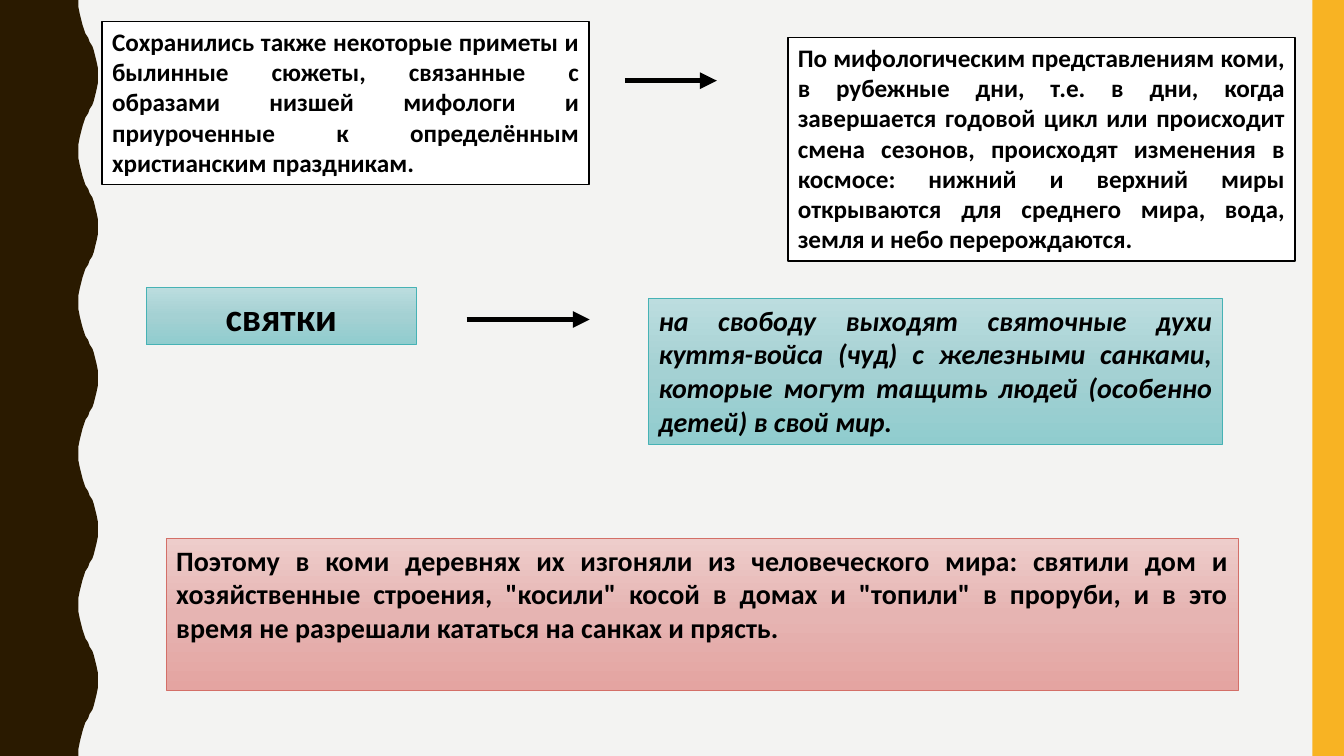
from copy import deepcopy
from dataclasses import dataclass

from lxml import etree
from pptx import Presentation
from pptx.dml.color import RGBColor
from pptx.enum import shapes, text
from pptx.oxml import ns
from pptx.util import Pt


@dataclass(frozen=True)
class Theme:
    background: str = "F3F3F2"
    wave: str = "2A1A00"
    stripe: str = "F8B323"
    ink: str = "000000"
    paper: tuple = ("FFFFFF",)
    teal: tuple = ("BCDDDF", "A4D1D3", "90CCCE")
    teal_edge: str = "46B2B5"
    rose: tuple = ("EECDCB", "E6B4B2", "E4A4A1")
    rose_edge: str = "D36F68"
    font: str = "Calibri"
    body: int = 18
    accent: int = 20
    heading: int = 28


THEME = Theme()
WIDTH, HEIGHT = 960, 540
WAVE_PERIOD = 108
# One rising half-wave, as (x, y) in points; the falling half mirrors it.
HALF_WAVE = [(56.2, 0), (56.4, 5), (57, 10), (57.8, 14.4), (58.7, 18),
             (60, 21), (61.3, 24), (62.7, 27), (64.1, 30), (65.5, 33),
             (66.9, 36), (68.2, 39.6), (69.2, 44), (69.8, 49), (70, 54)]


def rgb(color):
    return RGBColor.from_string(color)


def paint(shape, colors):
    """Fill with one colour, or with an even top-to-bottom gradient."""
    fill = shape.fill
    if len(colors) == 1:
        fill.solid()
        fill.fore_color.rgb = rgb(colors[0])
        return
    fill.gradient()
    fill.gradient_angle = 270
    stop_list = shape._element.spPr.find(".//" + ns.qn("a:gsLst"))
    while len(stop_list) < len(colors):
        stop_list.insert(1, deepcopy(stop_list[0]))
    for index, (stop, color) in enumerate(zip(fill.gradient_stops, colors)):
        stop.color.rgb = rgb(color)
        stop.position = index / (len(colors) - 1)


def add_wave(slide):
    period = HALF_WAVE + [(x, WAVE_PERIOD - y) for x, y in HALF_WAVE[-2::-1]]
    edge = [(x, top + y) for top in range(0, HEIGHT, WAVE_PERIOD)
            for x, y in period]
    builder = slide.shapes.build_freeform(0, 0, scale=float(Pt(1)))
    builder.add_line_segments(edge + [(0, HEIGHT)], close=True)
    wave = builder.convert_to_shape()
    wave.shadow.inherit = False
    paint(wave, (THEME.wave,))
    wave.line.fill.background()


def add_stripe(slide):
    left = 937.5
    stripe = slide.shapes.add_shape(shapes.MSO_SHAPE.RECTANGLE, Pt(left), 0,
                                    Pt(WIDTH - left), Pt(HEIGHT))
    stripe.shadow.inherit = False
    paint(stripe, (THEME.stripe,))
    stripe.line.fill.background()


def add_card(slide, box, wording, size, colors=THEME.paper, edge=THEME.ink,
             edge_width=1, align=text.PP_ALIGN.JUSTIFY, italic=None, grow=True):
    card = slide.shapes.add_shape(shapes.MSO_SHAPE.RECTANGLE,
                                  *(Pt(length) for length in box))
    card.shadow.inherit = False
    paint(card, colors)
    card.line.color.rgb = rgb(edge)
    card.line.width = Pt(edge_width)

    frame = card.text_frame
    frame.word_wrap = True
    frame.vertical_anchor = text.MSO_ANCHOR.TOP
    frame.auto_size = (text.MSO_AUTO_SIZE.SHAPE_TO_FIT_TEXT if grow
                       else text.MSO_AUTO_SIZE.NONE)
    paragraph = frame.paragraphs[0]
    paragraph.alignment = align
    run = paragraph.add_run()
    run.text = wording
    run.font.name = THEME.font
    run.font.size = Pt(size)
    run.font.bold = True
    run.font.italic = italic
    run.font.color.rgb = rgb(THEME.ink)


def add_arrow(slide, start, end, y):
    arrow = slide.shapes.add_connector(shapes.MSO_CONNECTOR.STRAIGHT,
                                       Pt(start), Pt(y), Pt(end), Pt(y))
    arrow.line.color.rgb = rgb(THEME.ink)
    arrow.line.width = Pt(4)
    etree.SubElement(arrow.line._get_or_add_ln(), ns.qn("a:tailEnd"),
                     type="triangle")
    etree.SubElement(arrow._element.spPr, ns.qn("a:effectLst"))


def main():
    deck = Presentation()
    deck.slide_width, deck.slide_height = Pt(WIDTH), Pt(HEIGHT)
    slide = deck.slides.add_slide(deck.slide_layouts[6])
    slide.background.fill.solid()
    slide.background.fill.fore_color.rgb = rgb(THEME.background)
    add_wave(slide)
    add_stripe(slide)

    add_card(slide, (73, 15.2, 347.8, 116.6),
             "Сохранились также некоторые приметы и былинные сюжеты, связанные "
             "с образами низшей мифологи и приуроченные к определённым "
             "христианским праздникам.", THEME.body)
    add_arrow(slide, 446.4, 512, 57.6)
    add_card(slide, (562.8, 26.6, 362.2, 159.8),
             "По мифологическим представлениям коми, в рубежные дни, т.е. в "
             "дни, когда завершается годовой цикл или происходит смена "
             "сезонов, происходят изменения в космосе: нижний и верхний миры "
             "открываются для среднего мира, вода, земля и небо "
             "перерождаются.", THEME.body)

    teal = dict(colors=THEME.teal, edge=THEME.teal_edge, edge_width=0.5)
    add_card(slide, (104.4, 205, 193, 41.2), "святки", THEME.heading,
             align=text.PP_ALIGN.CENTER, **teal)
    add_arrow(slide, 333.4, 421.2, 228.2)
    add_card(slide, (463.4, 213.1, 409.7, 104.4),
             "на свободу выходят святочные духи куття-войса (чуд) с железными "
             "санками, которые могут тащить людей (особенно детей) в свой "
             "мир.", THEME.accent, italic=True, **teal)

    add_card(slide, (118.8, 384.5, 765.5, 108.7),
             "Поэтому в коми деревнях их изгоняли из человеческого мира: "
             "святили дом и хозяйственные строения, \"косили\" косой в домах и "
             "\"топили\" в проруби, и в это время не разрешали кататься на "
             "санках и прясть.", THEME.accent, colors=THEME.rose,
             edge=THEME.rose_edge, edge_width=0.5, grow=False)
    deck.save("out.pptx")


if __name__ == "__main__":
    main()
